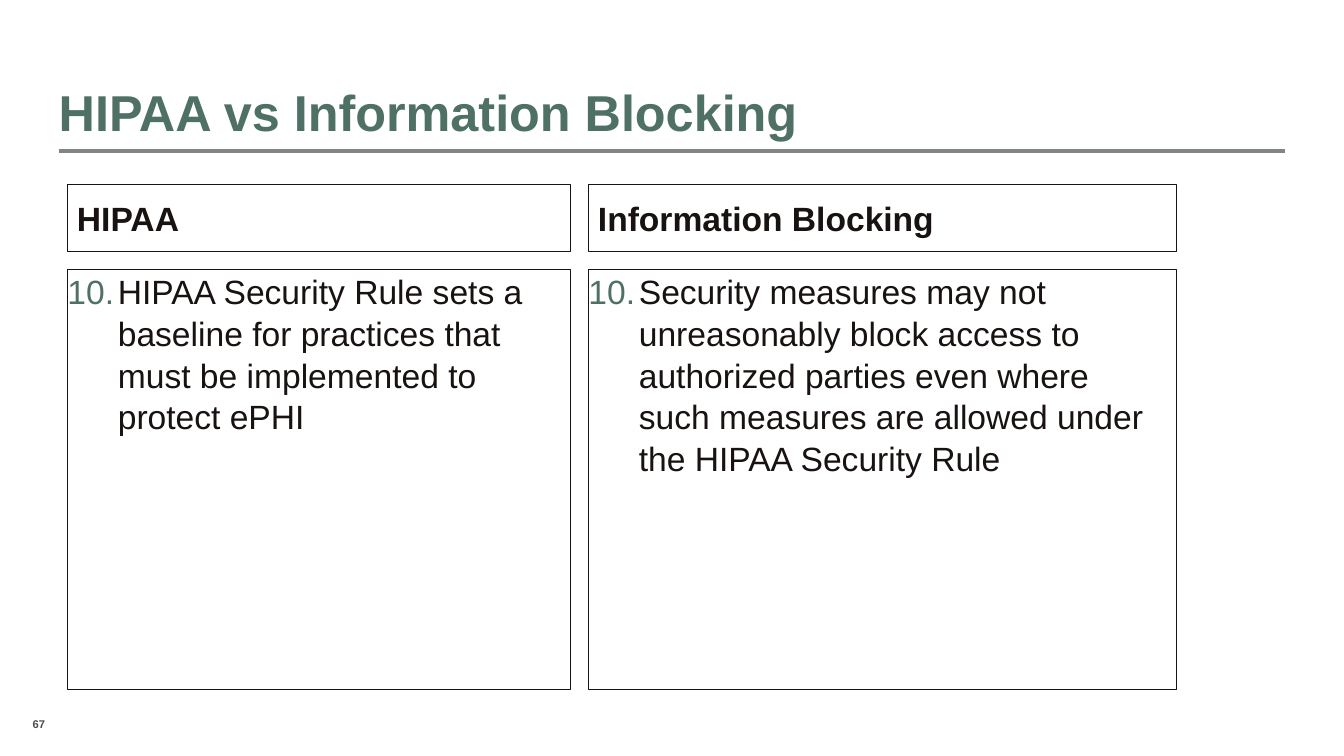
from lxml.etree import SubElement
from pptx import Presentation
from pptx.dml.color import RGBColor
from pptx.enum.shapes import MSO_CONNECTOR
from pptx.enum.text import MSO_ANCHOR, MSO_AUTO_SIZE, PP_ALIGN
from pptx.oxml.ns import qn
from pptx.util import Cm, Pt

GREEN = RGBColor(0x4F, 0x70, 0x65)
INK = RGBColor(0x18, 0x12, 0x10)
RULE_GREY = RGBColor(0x82, 0x85, 0x86)
NUMBER_GREY = RGBColor(0x4B, 0x4B, 0x4B)


def place(shape, left, top, width, height):
    shape.left, shape.top = Cm(left), Cm(top)
    shape.width, shape.height = Cm(width), Cm(height)


def write(shape, text, size, color, bold, anchor, left_inset=0, right_inset=0):
    frame = shape.text_frame
    frame.text = text
    frame.word_wrap = True
    frame.auto_size = MSO_AUTO_SIZE.NONE
    frame.vertical_anchor = anchor
    frame.margin_left, frame.margin_right = Cm(left_inset), Cm(right_inset)
    frame.margin_top = frame.margin_bottom = 0
    para = frame.paragraphs[0]
    para.alignment = PP_ALIGN.LEFT
    para.space_before = Pt(0)
    font = para.runs[0].font
    font.name, font.size, font.bold = "Arial", Pt(size), bold
    font.color.rgb = color
    return para


deck = Presentation()
deck.slide_width, deck.slide_height = Cm(33.87), Cm(19.05)
page = deck.slides.add_slide(deck.slide_layouts.get_by_name("Comparison"))
holders = page.placeholders

rule = page.shapes.add_connector(
    MSO_CONNECTOR.STRAIGHT, Cm(1.48), Cm(3.81), Cm(32.39), Cm(3.81))
rule.line.color.rgb = RULE_GREY
rule.line.width = Pt(3)
SubElement(rule._element.spPr, qn("a:effectLst"))

title = page.shapes.title
place(title, 1.48, 1.22, 30.91, 2.36)
write(title, "HIPAA vs Information Blocking", 36, GREEN, True, MSO_ANCHOR.BOTTOM)

columns = [
    (1, 1.7, 12.67, "HIPAA",
     "HIPAA Security Rule sets a baseline for practices that must be "
     "implemented to protect ePHI"),
    (3, 14.83, 14.81, "Information Blocking",
     "Security measures may not unreasonably block access to authorized "
     "parties even where such measures are allowed under the HIPAA Security Rule"),
]
for index, left, width, heading, point in columns:
    head_box, list_box = holders[index], holders[index + 1]
    place(head_box, left, 4.65, width, 1.7)
    place(list_box, left, 6.78, width, 10.59)
    for box in (head_box, list_box):
        box.line.color.rgb = INK
        box.line.width = Pt(0.75)

    para = write(head_box, heading, 24, INK, True, MSO_ANCHOR.MIDDLE, 0.24, 0.51)
    para.space_after = Pt(12)

    para = write(list_box, point, 24, INK, False, MSO_ANCHOR.TOP, 0, 0.51)
    para.space_after = Pt(6)
    para.line_spacing = 1.04
    props = para._p.get_or_add_pPr()
    props.set("marL", str(Cm(1.27)))
    props.set("indent", str(Cm(-1.27)))
    bullet_color = SubElement(props, qn("a:buClr"))
    SubElement(bullet_color, qn("a:srgbClr"), val=str(GREEN))
    SubElement(props, qn("a:buFont"), typeface="Arial")
    SubElement(props, qn("a:buAutoNum"), type="arabicPeriod", startAt="10")

number_box = page.shapes.add_textbox(Cm(0.13), Cm(18.08), Cm(1.7), Cm(0.33))
para = write(number_box, "67", 8, NUMBER_GREY, True, MSO_ANCHOR.TOP)
para.alignment = PP_ALIGN.CENTER

deck.save("out.pptx")
